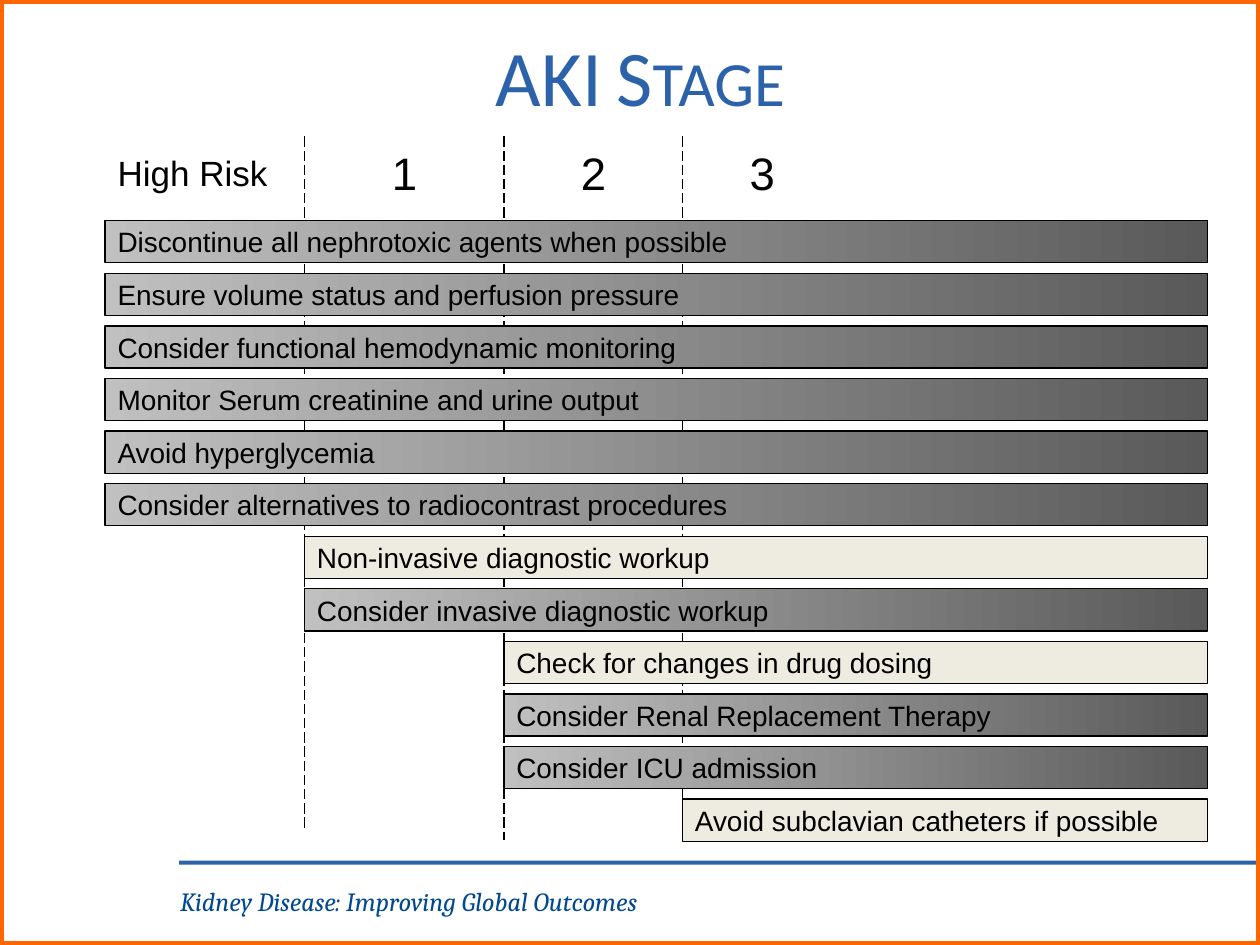
import pptx
import pptx.dml.color
import pptx.enum.dml
import pptx.enum.shapes
import pptx.enum.text
import pptx.oxml.ns
import pptx.util
from lxml import etree
from pptx.util import Cm

COLORS = {
    "blue": "2C62A9",
    "navy": "004990",
    "orange": "FF6600",
    "black": "000000",
    "cream": "EEECE1",
    "silver": "C0C0C0",
    "charcoal": "595959",
}
STAGE_LEFTS = {"High Risk": 2.12, "1": 6.14, "2": 10.16, "3": 13.76}
RIGHT_EDGE = 24.34
FIRST_TOP, ROW_PITCH, BAR_HEIGHT = 4.45, 1.06, 0.85
GRADED = ("silver", "charcoal")
PLAIN = ("cream",)
ACTIONS = [
    ("High Risk", GRADED, "Discontinue all nephrotoxic agents when possible"),
    ("High Risk", GRADED, "Ensure volume status and perfusion pressure"),
    ("High Risk", GRADED, "Consider functional hemodynamic monitoring"),
    ("High Risk", GRADED, "Monitor Serum creatinine and urine output"),
    ("High Risk", GRADED, "Avoid hyperglycemia"),
    ("High Risk", GRADED, "Consider alternatives to radiocontrast procedures"),
    ("1", PLAIN, "Non-invasive diagnostic workup"),
    ("1", GRADED, "Consider invasive diagnostic workup"),
    ("2", PLAIN, "Check for changes in drug dosing"),
    ("2", GRADED, "Consider Renal Replacement Therapy"),
    ("2", GRADED, "Consider ICU admission"),
    ("3", PLAIN, "Avoid subclavian catheters if possible"),
]
STAGE_LABELS = [
    ("High Risk", 2.12, 2.92, 3.58, 1.11, 20),
    ("1", 7.65, 2.79, 1.02, 1.38, 26),
    ("2", 11.46, 2.79, 1.02, 1.38, 26),
    ("3", 14.86, 2.79, 1.02, 1.38, 26),
]
DIVIDER_BOTTOMS = {"1": 16.72, "2": 16.93, "3": 16.93}


def rgb(name):
    """Return the named colour."""
    return pptx.dml.color.RGBColor.from_string(COLORS[name])


class StageSlide:
    """Hold the text style and the current slide."""

    body = {"name": "Arial", "size": pptx.util.Pt(16)}

    def __init__(self, presentation):
        """Add a blank slide."""
        self.slide = presentation.slides.add_slide(presentation.slide_layouts[6])

    def add_words(self, shape, text, color="black", wrap=False, align="LEFT", **formats):
        """Put one formatted paragraph into a shape."""
        frame = shape.text_frame
        frame.word_wrap = wrap
        paragraph = frame.paragraphs[0]
        paragraph.alignment = pptx.enum.text.PP_ALIGN[align]
        run = paragraph.add_run()
        run.text = text
        for attribute, value in {**self.body, **formats}.items():
            setattr(run.font, attribute, value)
        run.font.color.rgb = rgb(color)
        return run

    def text(self, text, left, top, width, height, size, **formats):
        """Add a text box that grows with its text."""
        shape = self.slide.shapes.add_textbox(Cm(left), Cm(top), Cm(width), Cm(height))
        shape.text_frame.auto_size = pptx.enum.text.MSO_AUTO_SIZE.SHAPE_TO_FIT_TEXT
        return self.add_words(shape, text, size=pptx.util.Pt(size), **formats)

    def rectangle(self, left, top, width, height, fills=(), line=None, weight=0.75):
        """Add a rectangle with no fill, a solid fill or a gradient."""
        shape = self.slide.shapes.add_shape(
            pptx.enum.shapes.MSO_SHAPE.RECTANGLE, Cm(left), Cm(top), Cm(width), Cm(height)
        )
        shape.shadow.inherit = False
        if len(fills) > 1:
            shape.fill.gradient()
            shape.fill.gradient_angle = 0
            for stop, name, position in zip(shape.fill.gradient_stops, fills, (0, 1)):
                stop.color.rgb = rgb(name)
                stop.position = position
        elif fills:
            shape.fill.solid()
            shape.fill.fore_color.rgb = rgb(fills[0])
        else:
            shape.fill.background()
        if line:
            shape.line.color.rgb = rgb(line)
            shape.line.width = pptx.util.Pt(weight)
        else:
            shape.line.fill.background()
        return shape

    def bar(self, row, stage, fills, text):
        """Add an action bar from its first stage to the right edge."""
        left = STAGE_LEFTS[stage]
        top = FIRST_TOP + row * ROW_PITCH
        shape = self.rectangle(left, top, RIGHT_EDGE - left, BAR_HEIGHT, fills, "black")
        shape.text_frame.vertical_anchor = pptx.enum.text.MSO_ANCHOR.MIDDLE
        self.add_words(shape, text)

    def divider(self, left, top, bottom):
        """Add a dashed vertical line."""
        connector = self.slide.shapes.add_connector(
            pptx.enum.shapes.MSO_CONNECTOR.STRAIGHT, Cm(left), Cm(top), Cm(left), Cm(bottom)
        )
        connector.line.color.rgb = rgb("black")
        connector.line.width = pptx.util.Pt(0.75)
        connector.line.dash_style = pptx.enum.dml.MSO_LINE.LONG_DASH
        etree.SubElement(connector._element.spPr, pptx.oxml.ns.qn("a:effectLst"))


def main():
    """Build and save the AKI stage slide."""
    presentation = pptx.Presentation()
    presentation.slide_width, presentation.slide_height = Cm(25.4), Cm(19.05)
    page = StageSlide(presentation)
    page.rectangle(3.61, 17.35, 21.79, 0.08, ("blue",))
    page.rectangle(0, 0, 25.4, 19.05, line="orange", weight=4.5)
    page.text("Kidney Disease: Improving Global Outcomes", 3.38, 17.73, 19.69, 0.89, 15,
              color="navy", wrap=True, name="Cambria", italic=True)
    for stage, bottom in DIVIDER_BOTTOMS.items():
        page.divider(STAGE_LEFTS[stage], 2.75, bottom)
    for label in STAGE_LABELS:
        page.text(*label)
    for row, action in enumerate(ACTIONS):
        page.bar(row, *action)
    title = page.text("AKI Stage", 1.48, 0.43, 22.86, 2.18, 45,
                      color="blue", wrap=True, align="CENTER", name="Calibri")
    title._r.get_or_add_rPr().set("cap", "small")
    presentation.save("out.pptx")


if __name__ == "__main__":
    main()
